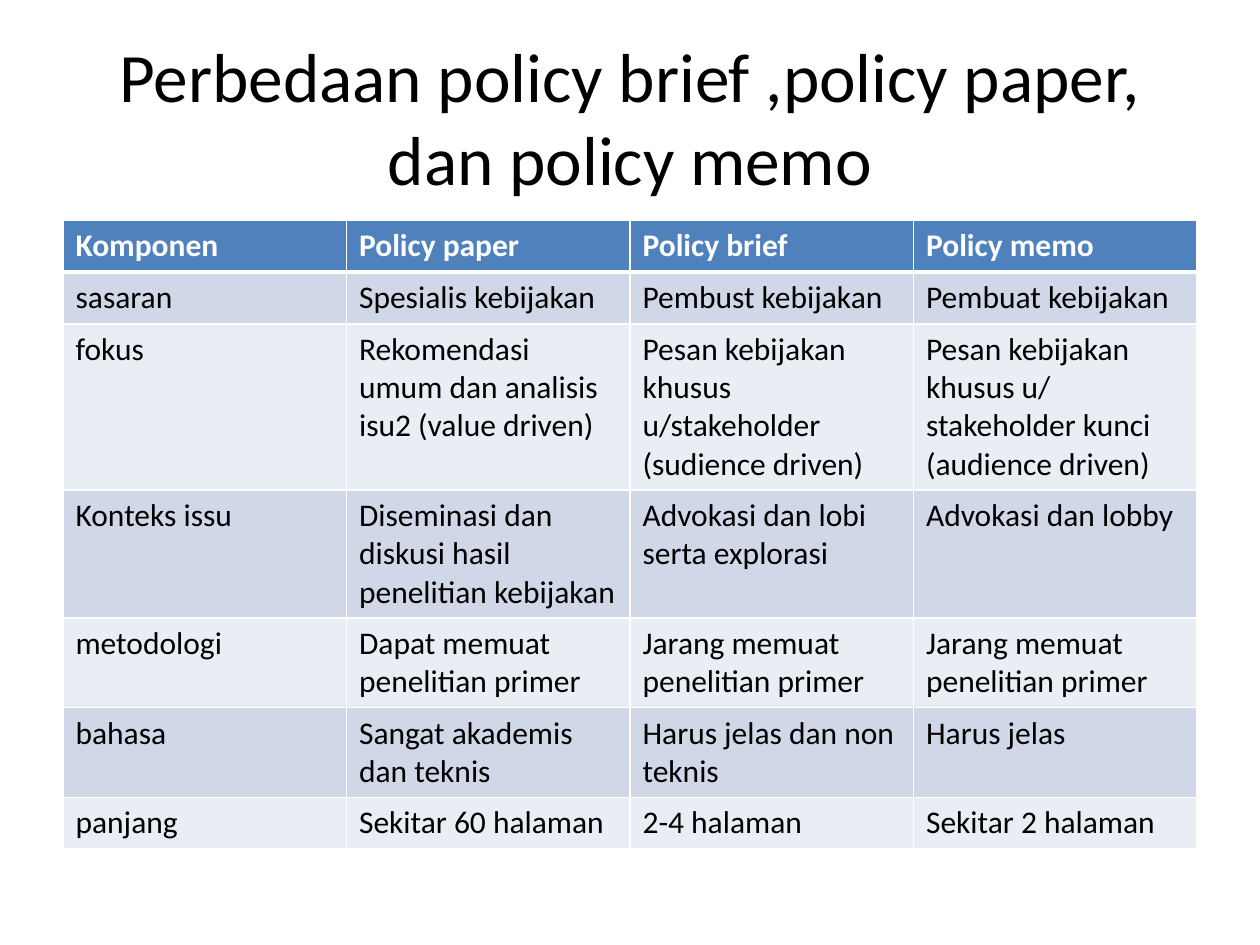
from dataclasses import dataclass

from lxml.etree import SubElement
from pptx import Presentation
from pptx.dml.color import RGBColor
from pptx.enum.text import MSO_ANCHOR, MSO_AUTO_SIZE, PP_ALIGN
from pptx.oxml.ns import qn
from pptx.util import Inches, Pt


@dataclass(frozen=True)
class Theme:
    """Colours, font and type sizes of the slide."""
    font: str = "Calibri"
    ink: str = "000000"
    paper: str = "FFFFFF"
    header: str = "4F81BD"
    bands: tuple = ("D0D8E8", "E9EDF4")
    title_size: float = 39.6
    body_size: float = 18
    thin_rule: float = 1
    header_rule: float = 3


class SlideBuilder:
    """Holds the theme and the current slide and adds its elements."""

    def __init__(self, theme, slide):
        self.theme = theme
        self.slide = slide

    def add_run(self, paragraph, wording, size, color, bold=False):
        """Add one styled run to a paragraph."""
        run = paragraph.add_run()
        run.text = wording
        run.font.name = self.theme.font
        run.font.size = Pt(size)
        run.font.bold = bold
        run.font.color.rgb = RGBColor.from_string(color)

    def add_title(self, wording, left, top, width, height):
        """Place and fill the title placeholder."""
        title = self.slide.shapes.title
        title.left, title.top = Inches(left), Inches(top)
        title.width, title.height = Inches(width), Inches(height)
        frame = title.text_frame
        frame.word_wrap = True
        frame.auto_size = MSO_AUTO_SIZE.NONE
        frame.vertical_anchor = MSO_ANCHOR.MIDDLE
        heading = frame.paragraphs[0]
        heading.alignment = PP_ALIGN.CENTER
        self.add_run(heading, wording, self.theme.title_size, self.theme.ink)

    def add_borders(self, cell, top, bottom):
        """Rule the four sides of a cell, with widths in points."""
        thin = self.theme.thin_rule
        properties = cell._tc.get_or_add_tcPr()
        for side, width in (("L", thin), ("R", thin), ("T", top), ("B", bottom)):
            rule = SubElement(properties, qn(f"a:ln{side}"), w=str(Pt(width)))
            fill = SubElement(rule, qn("a:solidFill"))
            SubElement(fill, qn("a:srgbClr"), val=self.theme.paper)

    def add_comparison(self, rows, left, top, width, row_height):
        """Add a table with a header row and banded body rows."""
        theme = self.theme
        columns = len(rows[0])
        table = self.slide.shapes.add_table(
            len(rows), columns, Inches(left), Inches(top),
            Inches(width), Inches(row_height * len(rows))).table
        for column in table.columns:
            column.width = Inches(width / columns)
        for index, row in enumerate(rows):
            table.rows[index].height = Inches(row_height)
            is_header = index == 0
            background = theme.header if is_header else theme.bands[(index - 1) % 2]
            color = theme.paper if is_header else theme.ink
            top_rule = theme.header_rule if index == 1 else theme.thin_rule
            bottom_rule = theme.header_rule if is_header else theme.thin_rule
            for position, wording in enumerate(row):
                cell = table.cell(index, position)
                self.add_borders(cell, top_rule, bottom_rule)
                cell.fill.solid()
                cell.fill.fore_color.rgb = RGBColor.from_string(background)
                self.add_run(cell.text_frame.paragraphs[0], wording,
                             theme.body_size, color, is_header)


COMPARISON = [
    ("Komponen", "Policy paper", "Policy brief", "Policy memo"),
    ("sasaran", "Spesialis kebijakan", "Pembust kebijakan", "Pembuat kebijakan"),
    ("fokus", "Rekomendasi umum dan analisis isu2 (value driven)",
     "Pesan kebijakan khusus u/stakeholder (sudience driven)",
     "Pesan kebijakan khusus u/ stakeholder kunci (audience driven)"),
    ("Konteks issu", "Diseminasi dan diskusi hasil penelitian kebijakan",
     "Advokasi dan lobi serta explorasi", "Advokasi dan lobby"),
    ("metodologi", "Dapat memuat penelitian primer",
     "Jarang memuat penelitian primer", "Jarang memuat penelitian primer"),
    ("bahasa", "Sangat akademis dan teknis", "Harus jelas dan non teknis",
     "Harus jelas"),
    ("panjang", "Sekitar 60 halaman", "2-4 halaman", "Sekitar 2 halaman"),
]


def main():
    """Build and save the slide."""
    presentation = Presentation()
    presentation.slide_width, presentation.slide_height = Inches(10), Inches(7.5)
    title_only = presentation.slide_layouts[5]
    builder = SlideBuilder(Theme(), presentation.slides.add_slide(title_only))
    builder.add_title("Perbedaan policy brief ,policy paper, dan policy memo",
                      0.5, 0.3, 9, 1.25)
    builder.add_comparison(COMPARISON, 0.5, 1.75, 9, 0.41)
    presentation.save("out.pptx")


if __name__ == "__main__":
    main()
